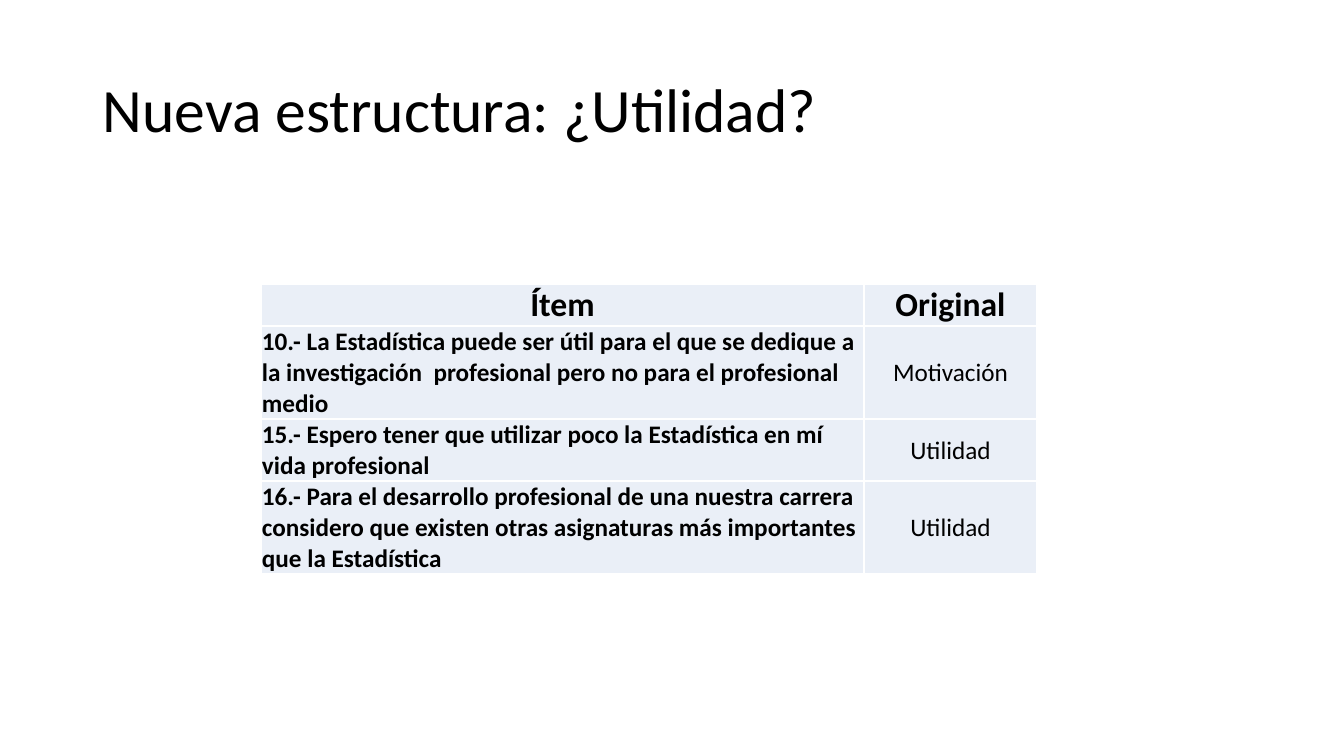
from lxml.etree import SubElement
from pptx import Presentation
from pptx.dml.color import RGBColor
from pptx.enum.text import MSO_ANCHOR as Anchor, PP_ALIGN as Align
from pptx.oxml.ns import qn
from pptx.util import Pt

TITLE = "Nueva estructura: ¿Utilidad?"
ROWS = [
    ("Ítem", "Original"),
    ("10.- La Estadística puede ser útil para el que se dedique a la investigación  profesional "
     "pero no para el profesional medio", "Motivación"),
    ("15.- Espero tener que utilizar poco la Estadística en mí vida profesional", "Utilidad"),
    ("16.- Para el desarrollo profesional de una nuestra carrera considero que existen otras "
     "asignaturas más importantes que la Estadística", "Utilidad"),
]
COLUMN_WIDTHS = [603, 173]
ROW_HEIGHTS = [42, 93, 62, 93]
TABLE_LEFT, TABLE_TOP = 261, 284
FONT, BLACK, WHITE, PALE_BLUE = "Calibri", "000000", "FFFFFF", "EAEFF7"
EMU_PER_PX = 914400 / 100.8


def px(length):
    return round(length * EMU_PER_PX)


def color(value):
    return RGBColor.from_string(value)


def write(frame, text, size, bold=False, align=Align.LEFT):
    frame.text = text
    para = frame.paragraphs[0]
    para.alignment = align
    font = para.runs[0].font
    font.name, font.size, font.bold = FONT, Pt(size), bold
    font.color.rgb = color(BLACK)
    return para


def add_borders(cell):
    properties = cell._tc.get_or_add_tcPr()
    for side in ("a:lnL", "a:lnR", "a:lnT", "a:lnB"):
        line = SubElement(properties, qn(side), w=str(Pt(1)))
        fill = SubElement(line, qn("a:solidFill"))
        SubElement(fill, qn("a:srgbClr"), val=WHITE)


def add_title(page):
    box = page.shapes.add_textbox(px(93), px(40), px(1159), px(146))
    frame = box.text_frame
    frame.word_wrap = True
    frame.vertical_anchor = Anchor.MIDDLE
    write(frame, TITLE, 44).line_spacing = 0.9


def add_items(page):
    table = page.shapes.add_table(
        len(ROWS), len(COLUMN_WIDTHS), px(TABLE_LEFT), px(TABLE_TOP),
        px(sum(COLUMN_WIDTHS)), px(sum(ROW_HEIGHTS))).table
    for column, width in zip(table.columns, COLUMN_WIDTHS):
        column.width = px(width)
    for row, height in zip(table.rows, ROW_HEIGHTS):
        row.height = px(height)
    for r, texts in enumerate(ROWS):
        for c, text in enumerate(texts):
            cell = table.cell(r, c)
            header, item = r == 0, c == 0
            add_borders(cell)
            cell.fill.solid()
            cell.fill.fore_color.rgb = color(PALE_BLUE)
            cell.margin_left = cell.margin_right = cell.margin_top = px(1)
            cell.margin_bottom = 0
            cell.vertical_anchor = Anchor.BOTTOM if header else Anchor.MIDDLE
            write(cell.text_frame, text, 24 if header else 18, header or item,
                  Align.LEFT if item and not header else Align.CENTER)


def main():
    deck = Presentation()
    deck.slide_width, deck.slide_height = px(1344), px(756)
    page = deck.slides.add_slide(deck.slide_layouts[6])
    add_title(page)
    add_items(page)
    deck.save("out.pptx")


if __name__ == "__main__":
    main()
